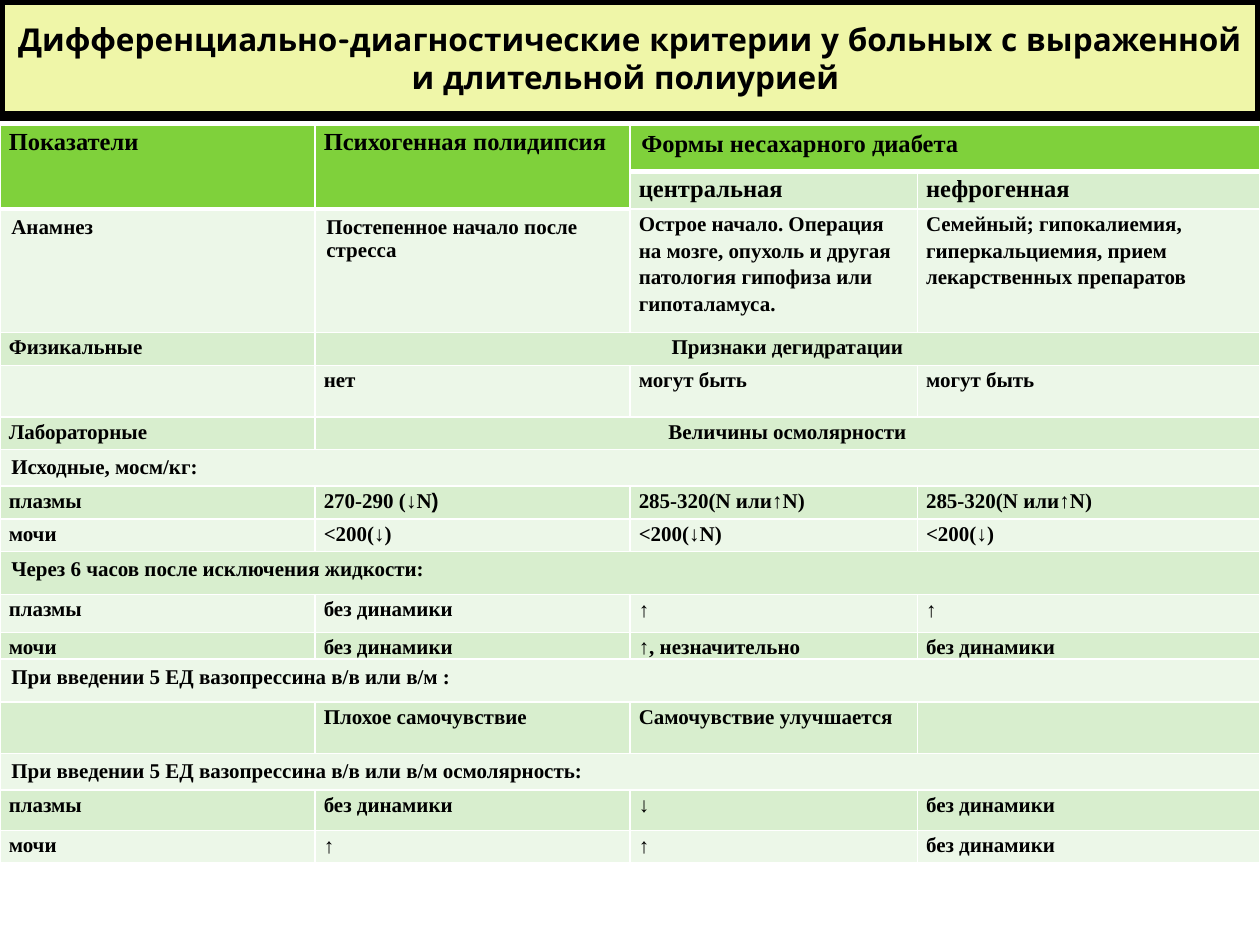
from dataclasses import dataclass

from pptx import Presentation
from pptx.dml.color import RGBColor as RGB
from pptx.enum.text import MSO_ANCHOR as Anchor, MSO_AUTO_SIZE as AutoSize, PP_ALIGN as Align
from pptx.oxml.ns import qn
from pptx.util import Inches, Pt
from lxml.etree import SubElement


@dataclass(frozen=True)
class Theme:
    ink: str = "000000"
    banner: str = "EFF6A8"
    header: str = "7FD13B"
    bands: tuple = ("ECF7E8", "D8EECE")
    rule: str = "FFFFFF"
    title_font: str = "Quicksand"
    body_font: str = "Times New Roman"
    symbol_font: str = "Arial"
    title_size: int = 18
    header_size: int = 14
    body_size: int = 12


@dataclass(frozen=True)
class Cell:
    text: str = ""
    roomy: bool = False
    align: Align = Align.LEFT


T = Theme()
WIDTH, HEIGHT = Inches(10), Inches(7.5)
COLUMN_SHARES = (0.25, 0.25, 0.228, 0.272)
ROW_HEIGHTS = (0.37, 0.3, 0.98, 0.26, 0.41, 0.26, 0.29, 0.26, 0.26,
               0.34, 0.3, 0.21, 0.34, 0.41, 0.29, 0.32, 0.26)
TITLE = "Дифференциально-диагностические критерии у больных с выраженной и длительной полиурией "
SYMBOL = "|"


def plain(*texts: str) -> list[Cell]:
    return [Cell(t) for t in texts]


def section(text: str) -> list[Cell]:
    return [Cell(text, roomy=True)]


def group(label: str, heading: str) -> list[Cell]:
    return [Cell(label), Cell(heading, align=Align.CENTER)]


ROWS = [
    plain("Показатели", "Психогенная полидипсия") + section("Формы несахарного диабета"),
    plain("", "", "центральная", "нефрогенная"),
    section("Анамнез") + section("Постепенное начало после стресса") + plain(
        "Острое начало. Операция на мозге, опухоль и другая патология гипофиза или гипоталамуса.",
        "Семейный; гипокалиемия, гиперкальциемия, прием лекарственных препаратов"),
    group("Физикальные", "Признаки дегидратации"),
    plain("", "нет", "могут быть", "могут быть"),
    group("Лабораторные", "Величины осмолярности"),
    section("Исходные, мосм/кг:"),
    plain("плазмы", "270-290 (|↓|N|)", "285-320(N или|↑|N)", "285-320(N или|↑|N)"),
    plain("мочи", "<200(|↓|)", "<200(|↓|N)", "<200(|↓|)"),
    section("Через 6 часов после исключения жидкости:"),
    plain("плазмы", "без динамики", "|↑", "|↑"),
    plain("мочи", "без динамики", "↑, незначительно", "без динамики"),
    section("При введении 5 ЕД вазопрессина в/в или в/м :"),
    plain("", "Плохое самочувствие", "Самочувствие улучшается", ""),
    section("При введении 5 ЕД вазопрессина в/в или в/м осмолярность:"),
    plain("плазмы", "без динамики", "|↓", "без динамики"),
    plain("мочи", "|↑", "|↑", "без динамики"),
]


def add_run(p, text: str, *, font: str, size: int) -> None:
    r = p.add_run()
    r.text = text
    r.font.name, r.font.size, r.font.bold = font, Pt(size), True
    r.font.color.rgb = RGB.from_string(T.ink)


def set_borders(cell, *, bottom: int) -> None:
    pr = cell._tc.get_or_add_tcPr()
    for side, width in (("L", 1), ("R", 1), ("T", 1), ("B", bottom)):
        ln = SubElement(pr, qn(f"a:ln{side}"), w=str(Pt(width)))
        SubElement(SubElement(ln, qn("a:solidFill")), qn("a:srgbClr"), val=T.rule)


def style_cell(cell, *, fill: str, bottom: int) -> None:
    set_borders(cell, bottom=bottom)
    cell.fill.solid()
    cell.fill.fore_color.rgb = RGB.from_string(fill)


def write_cell(cell, item: Cell, *, size: int) -> None:
    cell.margin_left = cell.margin_right = Inches(0.09 if item.roomy else 0.07)
    cell.margin_top = cell.margin_bottom = Inches(0.05 if item.roomy else 0)
    p = cell.text_frame.paragraphs[0]
    p.alignment = item.align
    p.font.size = Pt(size)
    if not item.roomy:
        p.line_spacing, p.space_after = 1.15, Pt(10)
    for i, part in enumerate(item.text.split(SYMBOL)):
        if part:
            add_run(p, part, font=T.symbol_font if i % 2 else T.body_font, size=size)


def add_title(s) -> None:
    sp = s.shapes.title
    sp.left, sp.top, sp.width, sp.height = 0, 0, WIDTH, Inches(0.92)
    sp.fill.solid()
    sp.fill.fore_color.rgb = RGB.from_string(T.banner)
    sp.line.color.rgb = RGB.from_string(T.ink)
    sp.line.width = Pt(6)
    tf = sp.text_frame
    tf.word_wrap, tf.auto_size, tf.vertical_anchor = True, AutoSize.NONE, Anchor.MIDDLE
    p = tf.paragraphs[0]
    p.alignment = Align.CENTER
    add_run(p, TITLE, font=T.title_font, size=T.title_size)


def add_criteria_table(s) -> None:
    last = len(COLUMN_SHARES) - 1
    table = s.shapes.add_table(len(ROWS), last + 1, 0, Inches(0.99), WIDTH,
                               Inches(sum(ROW_HEIGHTS))).table
    table.first_row = table.horz_banding = False
    for column, share in zip(table.columns, COLUMN_SHARES):
        column.width = int(WIDTH * share)
    for i, (row, height, items) in enumerate(zip(table.rows, ROW_HEIGHTS, ROWS)):
        row.height = Inches(height)
        for j, cell in enumerate(row.cells):
            heading = i == 0 or (i == 1 and j < 2)
            style_cell(cell, fill=T.header if heading else T.bands[i % 2],
                       bottom=3 if heading else 1)
        for j, item in enumerate(items):
            write_cell(table.cell(i, j), item, size=T.header_size if i < 2 else T.body_size)
        if len(items) <= last:
            table.cell(i, len(items) - 1).merge(table.cell(i, last))
    for j in range(2):
        table.cell(0, j).merge(table.cell(1, j))


def main() -> None:
    prs = Presentation()
    prs.slide_width, prs.slide_height = WIDTH, HEIGHT
    s = prs.slides.add_slide(prs.slide_layouts[5])
    add_title(s)
    add_criteria_table(s)
    prs.save("out.pptx")


if __name__ == "__main__":
    main()
